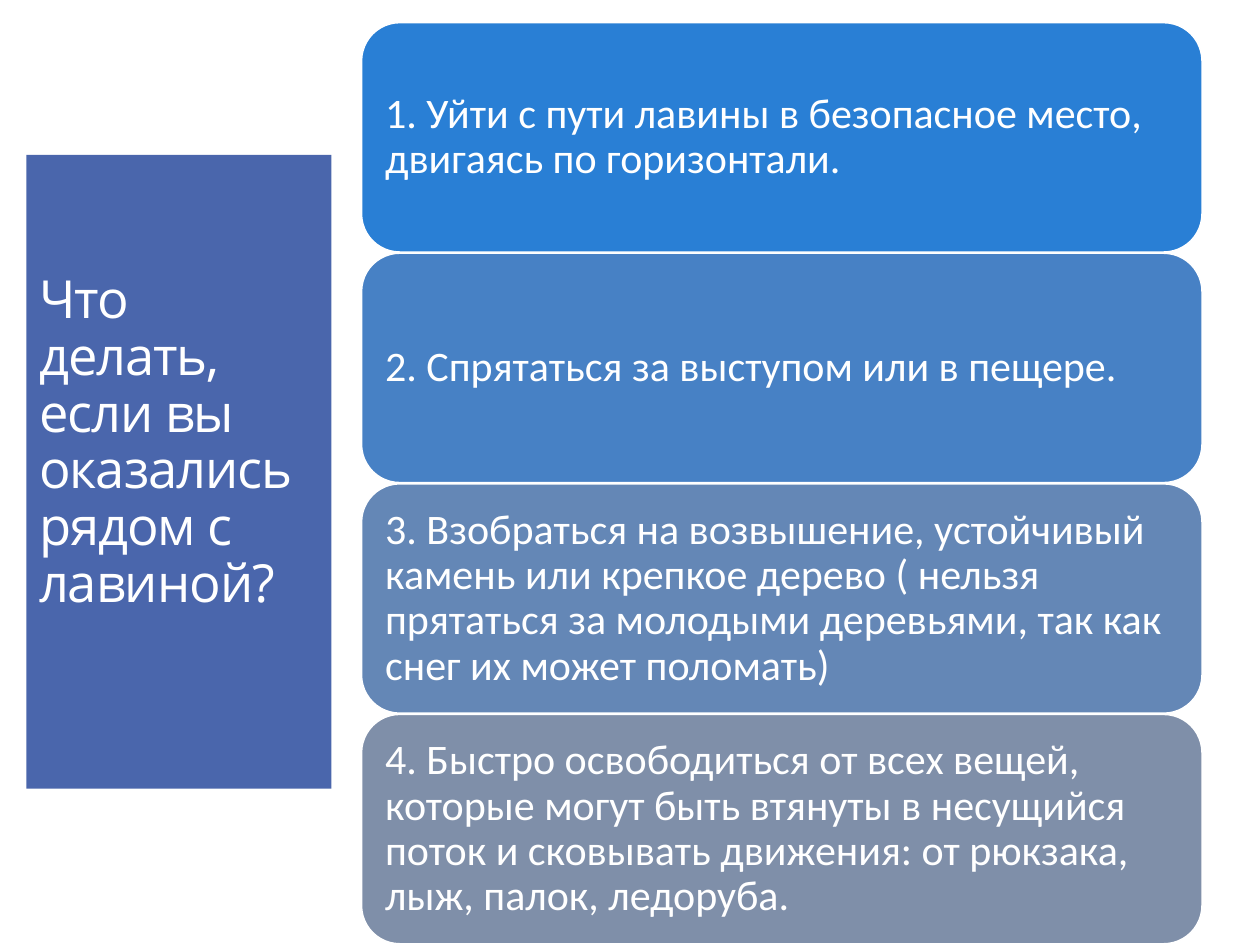
from pptx import Presentation
from pptx.dml.color import RGBColor
from pptx.enum.shapes import MSO_SHAPE
from pptx.enum.text import MSO_ANCHOR, MSO_AUTO_SIZE, PP_ALIGN
from pptx.util import Inches, Pt

ROUND = MSO_SHAPE.ROUNDED_RECTANGLE
MIDDLE = MSO_ANCHOR.MIDDLE
LEFT = PP_ALIGN.LEFT
NO_FIT = MSO_AUTO_SIZE.NONE

WHITE = RGBColor(0xFF, 0xFF, 0xFF)
INDIGO = RGBColor(0x4A, 0x66, 0xAC)
BLUE = RGBColor(0x29, 0x7F, 0xD5)
STEEL = RGBColor(0x47, 0x81, 0xC5)
SLATE = RGBColor(0x64, 0x87, 0xB6)
GREY = RGBColor(0x7F, 0x8F, 0xA9)

STEPS = [
    ("1. Уйти с пути лавины в безопасное место, двигаясь по горизонтали.", BLUE),
    ("2. Спрятаться за выступом или в пещере.", STEEL),
    ("3. Взобраться на возвышение, устойчивый камень или крепкое дерево "
     "( нельзя прятаться за молодыми деревьями, так как снег их может поломать)",
     SLATE),
    ("4. Быстро освободиться от всех вещей, которые могут быть втянуты "
     "в несущийся поток и сковывать движения: от рюкзака, лыж, палок, ледоруба.",
     GREY),
]


def write(shape, text, font, size, inset=0.1, bottom=0.1, spacing=None):
    """Fill a shape with one left-aligned white paragraph; insets in inches."""
    frame = shape.text_frame
    frame.word_wrap = True
    frame.auto_size = NO_FIT
    frame.vertical_anchor = MIDDLE
    frame.margin_left = frame.margin_right = Inches(0.1)
    frame.margin_top = Inches(inset)
    frame.margin_bottom = Inches(bottom)
    para = frame.paragraphs[0]
    para.alignment = LEFT
    para.line_spacing = 0.9
    run = para.add_run()
    run.text = text
    run.font.name = font
    run.font.size = Pt(size)
    run.font.color.rgb = WHITE
    if spacing is not None:
        run.font._element.set("spc", str(round(spacing * 100)))


prs = Presentation()
prs.slide_width = Inches(10)
prs.slide_height = Inches(7.5)
slide = prs.slides.add_slide(prs.slide_layouts[5])

title = slide.shapes.title
title.left, title.top = Inches(0.21), Inches(1.23)
title.width, title.height = Inches(2.42), Inches(5.03)
title.fill.solid()
title.fill.fore_color.rgb = INDIGO
write(title, "Что делать, если вы оказались рядом с лавиной?", "Open Sans", 30,
      inset=0.05, bottom=0.5, spacing=-0.6)

TOP, HEIGHT, PITCH = 0.18, 1.82, 1.83
for row, (text, color) in enumerate(STEPS):
    step = slide.shapes.add_shape(ROUND, Inches(2.87), Inches(TOP + row * PITCH),
                                  Inches(6.67), Inches(HEIGHT))
    step.shadow.inherit = False
    step.fill.solid()
    step.fill.fore_color.rgb = color
    step.line.color.rgb = WHITE
    step.line.width = Pt(0.85)
    write(step, text, "Calibri", 24)

prs.save("out.pptx")
